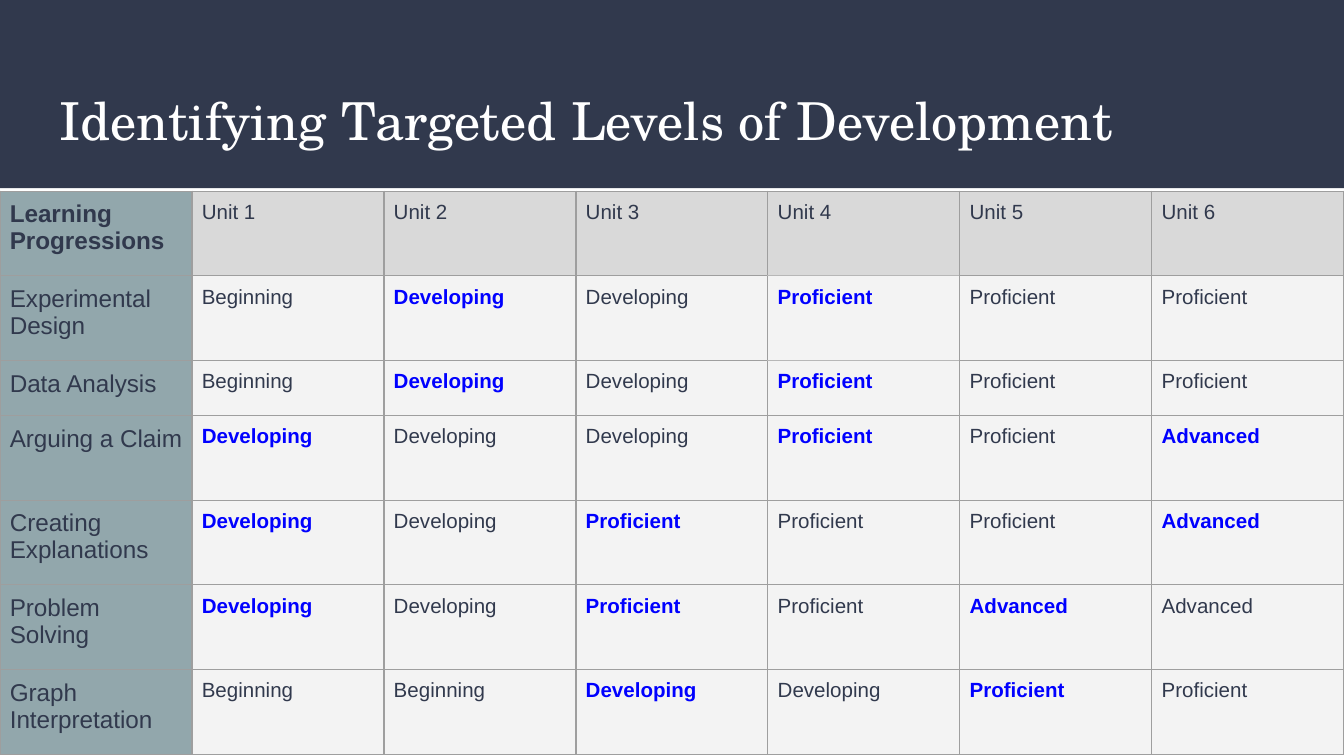
from lxml import etree
from pptx import Presentation
from pptx.dml.color import RGBColor
from pptx.enum import shapes, text
from pptx.oxml import ns
from pptx.util import Pt

COLORS = {
    "navy": "31394D", "white": "FFFFFF", "teal": "92A7AC", "header": "D9D9D9",
    "cell": "F3F3F3", "blue": "0000FF", "border": "9E9E9E", "light": "B7B7B7",
}
UNITS = 6
LEVELS = {
    "B": "Beginning", "D": "Developing", "P": "Proficient", "A": "Advanced",
}
# One level letter per unit
PROGRESSIONS = {
    "Experimental Design": "BDDPPP",
    "Data Analysis": "BDDPPP",
    "Arguing a Claim": "DDDPPA",
    "Creating Explanations": "DDPPPA",
    "Problem Solving": "DDPPAA",
    "Graph Interpretation": "BBDDPP",
}


def color(name):
    return RGBColor.from_string(COLORS[name])


class SlideBuilder:
    """Holds the style and the current slide."""
    title_font = "TeX Gyre Schola"
    body_font = "Arial"
    label_size = 13
    level_size = 11
    cell_margin = 5.25
    border_width = 0.75

    def __init__(self, slide):
        self.slide = slide

    def set_format(self, target, values):
        for name, value in values.items():
            setattr(target, name, value)

    def add_text(self, frame, content, font, size, ink, bold=False):
        paragraph = frame.paragraphs[0]
        paragraph.alignment = text.PP_ALIGN.LEFT
        run = paragraph.add_run()
        run.text = content
        self.set_format(run.font, {"name": font, "size": Pt(size), "bold": bold})
        run.font.color.rgb = color(ink)

    def band(self, width, height):
        shape = self.slide.shapes.add_shape(
            shapes.MSO_SHAPE.RECTANGLE, 0, 0, Pt(width), Pt(height))
        shape.shadow.inherit = False
        shape.fill.solid()
        shape.fill.fore_color.rgb = color("navy")
        shape.line.fill.background()
        # Send behind the title
        self.slide.shapes.element.insert(2, shape.element)

    def title(self, content, left, top, width, height):
        shape = self.slide.shapes.title
        self.set_format(shape, {"left": Pt(left), "top": Pt(top),
                                "width": Pt(width), "height": Pt(height)})
        frame = shape.text_frame
        sides = ("left", "top", "right", "bottom")
        self.set_format(frame, {f"margin_{side}": Pt(7.2) for side in sides})
        self.set_format(frame, {"word_wrap": True,
                                "auto_size": text.MSO_AUTO_SIZE.NONE,
                                "vertical_anchor": text.MSO_ANCHOR.MIDDLE})
        self.add_text(frame, content, self.title_font, 28, "white")

    def table(self, left, top, width, row_heights, columns):
        height = sum(row_heights)
        table = self.slide.shapes.add_table(
            len(row_heights), columns, Pt(left), Pt(top),
            Pt(width), Pt(height)).table
        self.set_format(table, {"first_row": False, "horz_banding": False})
        for column in table.columns:
            column.width = Pt(width / columns)
        for row, row_height in zip(table.rows, row_heights):
            row.height = Pt(row_height)
        return table

    def cell(self, cell, content, fill, size, ink="navy", bold=False, light=""):
        sides = ("left", "top", "right", "bottom")
        self.set_format(
            cell, {f"margin_{side}": Pt(self.cell_margin) for side in sides})
        cell.vertical_anchor = text.MSO_ANCHOR.TOP
        self.borders(cell, light)
        cell.fill.solid()
        cell.fill.fore_color.rgb = color(fill)
        self.add_text(cell.text_frame, content, self.body_font, size, ink, bold)

    def borders(self, cell, light):
        properties = cell._tc.get_or_add_tcPr()
        for side in "LRTB":
            line = etree.SubElement(properties, ns.qn(f"a:ln{side}"),
                                    w=str(Pt(self.border_width)))
            fill = etree.SubElement(line, ns.qn("a:solidFill"))
            name = "light" if side in light else "border"
            etree.SubElement(fill, ns.qn("a:srgbClr"), val=COLORS[name])


def main():
    presentation = Presentation()
    presentation.slide_width, presentation.slide_height = Pt(720), Pt(405)
    title_only = presentation.slide_layouts[5]
    builder = SlideBuilder(presentation.slides.add_slide(title_only))

    # Heading
    builder.band(720, 100.8)
    builder.title("Identifying Targeted Levels of Development",
                  24.5, 39.6, 671, 49)

    # Table grid: only the one-line label has a short row
    heights = [29.4 if label == "Data Analysis" else 45.4
               for label in PROGRESSIONS]
    table = builder.table(0, 102.4, 720, [45.4] + heights, UNITS + 1)

    # Header row; the Unit 4 column has lighter lines near the top
    light_sides = {(0, 4): "B", (1, 4): "TB", (2, 4): "T"}
    builder.cell(table.cell(0, 0), "Learning Progressions", "teal",
                 builder.label_size, bold=True)
    for unit in range(1, UNITS + 1):
        builder.cell(table.cell(0, unit), f"Unit {unit}", "header",
                     builder.level_size, light=light_sides.get((0, unit), ""))

    # Levels: each step up from the unit before is bold blue
    for row, (label, levels) in enumerate(PROGRESSIONS.items(), 1):
        builder.cell(table.cell(row, 0), label, "teal", builder.label_size)
        for unit, (before, level) in enumerate(zip("B" + levels, levels), 1):
            step_up = level != before
            builder.cell(table.cell(row, unit), LEVELS[level], "cell",
                         builder.level_size, "blue" if step_up else "navy",
                         step_up, light_sides.get((row, unit), ""))

    presentation.save("out.pptx")


if __name__ == "__main__":
    main()
